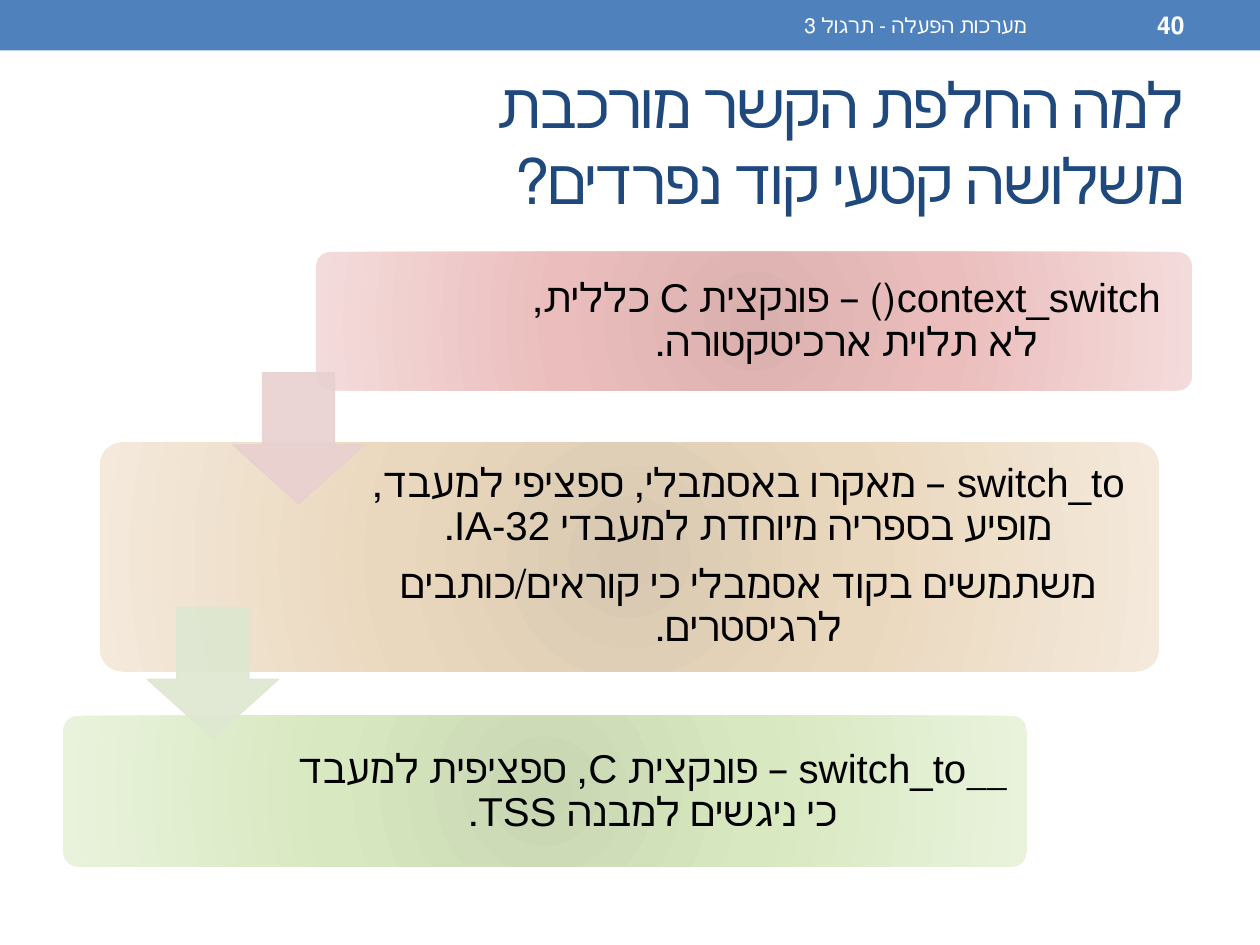
from lxml import etree
from pptx import Presentation
from pptx.dml.color import RGBColor
from pptx.enum.shapes import MSO_SHAPE
from pptx.enum.text import MSO_ANCHOR, MSO_AUTO_SIZE, PP_ALIGN
from pptx.oxml import parse_xml
from pptx.oxml.ns import nsdecls, qn
from pptx.util import Inches, Pt

RECT, ROUND, ARROW = MSO_SHAPE.RECTANGLE, MSO_SHAPE.ROUNDED_RECTANGLE, MSO_SHAPE.DOWN_ARROW
RIGHT, CENTER = PP_ALIGN.RIGHT, PP_ALIGN.CENTER
MIDDLE, NO_FIT = MSO_ANCHOR.MIDDLE, MSO_AUTO_SIZE.NONE

THEME = {
    "font": "Arial",
    "bar": "4F81BD",
    "title": {"size": 36, "color": "1F497D"},
    "footer": {"size": 12, "color": "FFFFFF"},
    "number": {"size": 14, "color": "FFFFFF", "bold": True},
    "body": {"size": 23, "color": "000000"},
    "red": ("DAB0AF", "EBBEBD", "F4DBDB"),
    "tan": ("D9C8B1", "EAD8BE", "F4E9DB"),
    "green": ("C8D7B2", "D8E8C0", "E9F3DC"),
    "red_arrow": "E8D0D0",
    "green_arrow": "DEE7D1",
}


def write(shape, paragraphs, style, align=RIGHT):
    """Fill a shape with right-to-left paragraphs in one theme style."""
    tf = shape.text_frame
    frame = {"word_wrap": True, "auto_size": NO_FIT, "vertical_anchor": MIDDLE}
    for name, value in frame.items():
        setattr(tf, name, value)
    tf.text = "\n".join(paragraphs)
    look = THEME[style]
    font = {"name": THEME["font"], "size": Pt(look["size"]), "bold": look.get("bold", False)}
    for p in tf.paragraphs:
        p.alignment = align
        p._p.get_or_add_pPr().set("rtl", "1")
        for r in p.runs:
            for name, value in font.items():
                setattr(r.font, name, value)
            r.font.color.rgb = RGBColor.from_string(look["color"])
    return tf


def add_shape(kind, box, color=None):
    """Add a preset shape without shadow or outline."""
    shape = s.shapes.add_shape(kind, *map(Inches, box))
    shape.shadow.inherit = False
    shape.line.fill.background()
    if color:
        shape.fill.solid()
        shape.fill.fore_color.rgb = RGBColor.from_string(color)
    return shape


prs = Presentation()
prs.slide_width, prs.slide_height = Inches(10), Inches(7.5)
s = prs.slides.add_slide(prs.slide_layouts[5])

# Header bar with footer text and slide number
add_shape(RECT, (0, 0, 10, 0.4), THEME["bar"])
for box, text, style in [
    ((3.75, 0.02, 4.5, 0.36), "מערכות הפעלה - תרגול 3", "footer"),
    ((8.33, 0.02, 1.17, 0.36), "40", "number"),
]:
    write(s.shapes.add_textbox(*map(Inches, box)), [text], style)

# Title
title = s.shapes.title
title.left, title.top, title.width, title.height = map(Inches, (0.5, 0.58, 9, 1.08))
tf = write(title, ["למה החלפת הקשר מורכבת\vמשלושה קטעי קוד נפרדים?"], "title")
for r in tf.paragraphs[0].runs:
    r._r.get_or_add_rPr().set("spc", "-100")

# Three steps: card, text area, colours, paragraphs
steps = [
    ((2.51, 2, 6.95, 1.1), (4.01, 2.03, 5.42, 1.04), "red",
     ["context_switch() – פונקצית C כללית, לא תלוית ארכיטקטורה."]),
    ((0.79, 3.51, 8.41, 1.82), (2.73, 3.56, 6.42, 1.71), "tan",
     ["switch_to – מאקרו באסמבלי, ספציפי למעבד, מופיע בספריה מיוחדת למעבדי IA-32.",
      "משתמשים בקוד אסמבלי כי קוראים/כותבים לרגיסטרים."]),
    ((0.5, 5.68, 7.65, 1.2), (2.25, 5.72, 5.86, 1.13), "green",
     ["__switch_to – פונקצית C, ספציפית למעבד כי ניגשים למבנה TSS."]),
]
for card_box, text_box, palette, paragraphs in steps:
    card = add_shape(ROUND, card_box)
    card.adjustments[0] = 0.1
    stops = "".join(
        f'<a:gs pos="{pos * 1000}"><a:srgbClr val="{color}"/></a:gs>'
        for pos, color in zip((0, 45, 100), THEME[palette]))
    card._element.spPr.find(qn("a:prstGeom")).addnext(parse_xml(
        f'<a:gradFill {nsdecls("a")} rotWithShape="1"><a:gsLst>{stops}</a:gsLst>'
        '<a:path path="circle"><a:fillToRect l="100000" t="100000" r="100000" b="100000"/>'
        '</a:path></a:gradFill>'))

    tf = write(s.shapes.add_textbox(*map(Inches, text_box)), paragraphs, "body", CENTER)
    for side in ("left", "top", "right", "bottom"):
        setattr(tf, f"margin_{side}", Inches(0.1))
    for p in tf.paragraphs:
        p.line_spacing = 0.9
        p.space_after = Pt(0)
        after = p._p.pPr.find(qn("a:spcAft"))
        after.remove(after[0])
        etree.SubElement(after, qn("a:spcPct")).set("val", "35000")

# Translucent arrows between the steps
for left, top, color in [(1.85, 2.96, "red_arrow"), (1.17, 4.82, "green_arrow")]:
    arrow = add_shape(ARROW, (left, top, 1.04, 1.04), THEME[color])
    arrow.adjustments[0], arrow.adjustments[1] = 0.55, 0.45
    arrow.line.color.rgb = RGBColor.from_string(THEME[color])
    arrow.line.width = Pt(0.75)
    for clr in arrow._element.spPr.iter(qn("a:srgbClr")):
        etree.SubElement(clr, qn("a:alpha")).set("val", "90000")

prs.save("out.pptx")
